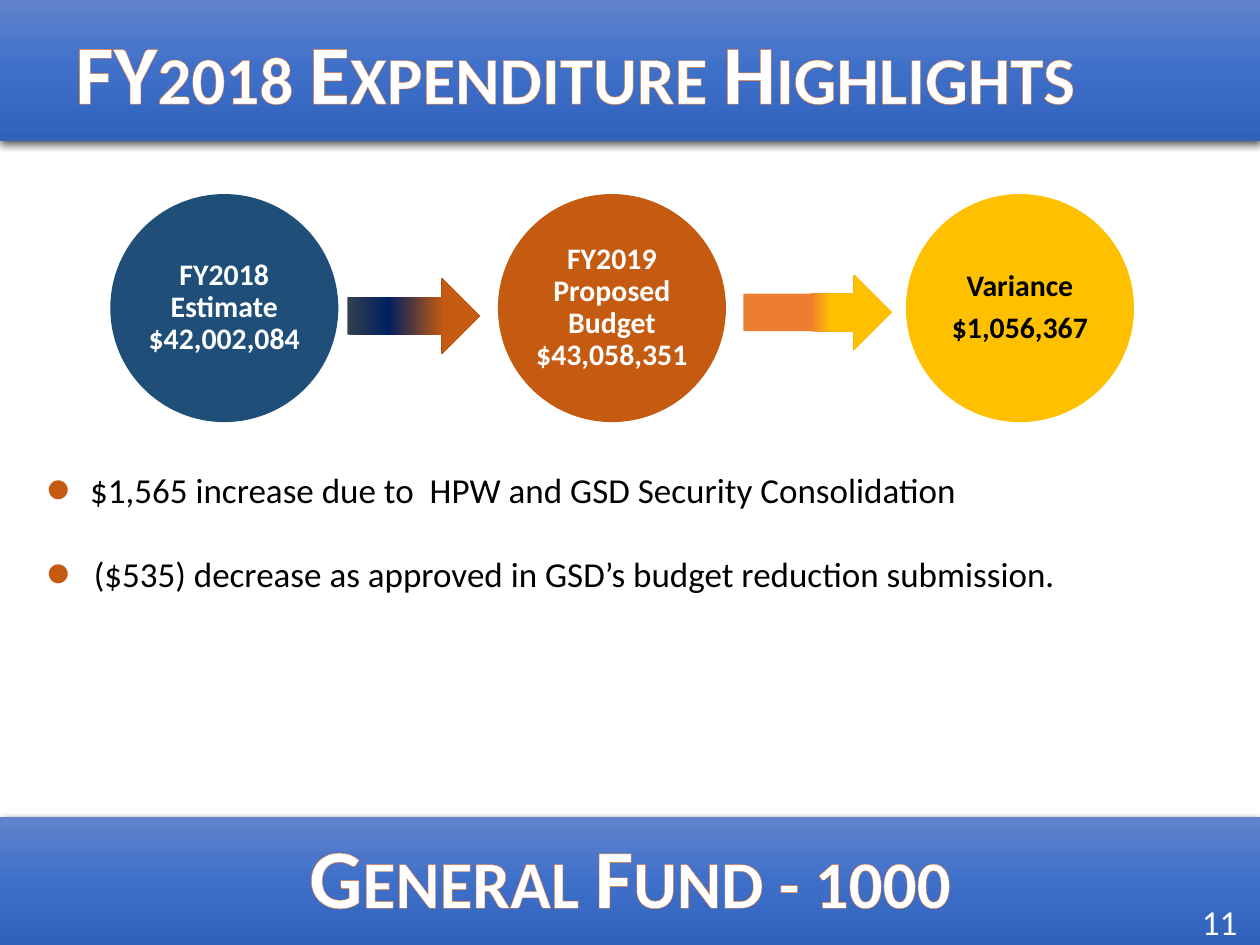
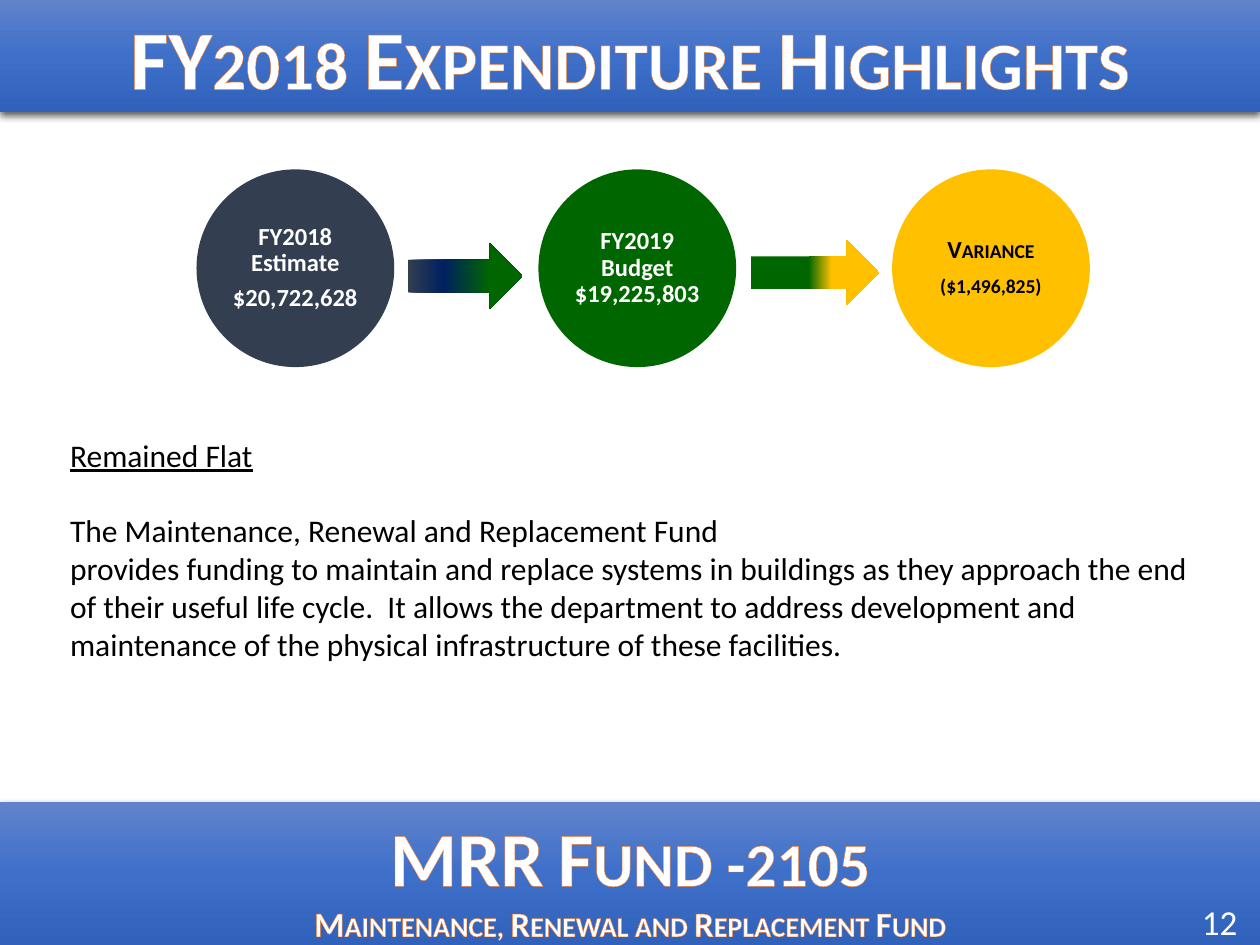
from lxml.etree import SubElement
from pptx import Presentation
from pptx.dml.color import RGBColor
from pptx.enum.shapes import MSO_SHAPE
from pptx.enum.text import MSO_ANCHOR, PP_ALIGN
from pptx.oxml.ns import qn
from pptx.util import Pt

WHITE = RGBColor(0xFF, 0xFF, 0xFF)
BLACK = RGBColor(0, 0, 0)
BAND_LIGHT = RGBColor(0x61, 0x83, 0xCB)
BAND_MID = RGBColor(0x3E, 0x70, 0xCA)
BAND_DARK = RGBColor(0x30, 0x62, 0xBB)
ORANGE = RGBColor(0xED, 0x7D, 0x31)
RUST = RGBColor(0xC5, 0x5A, 0x11)
GOLD = RGBColor(0xFF, 0xC0, 0x00)
BLUE = RGBColor(0x1F, 0x4E, 0x79)
SLATE = RGBColor(0x33, 0x3F, 0x50)
NAVY = RGBColor(0x00, 0x20, 0x60)
GREEN = RGBColor(0x00, 0x66, 0x00)

FONT = "Calibri"
SLIDE_W, SLIDE_H = 720, 540
BAND_STOPS = [(0, BAND_LIGHT), (50, BAND_MID), (100, BAND_DARK)]
HEADING = "FY2018 Expenditure Highlights"


def add_node(parent, tag, **attributes):
    return SubElement(parent, qn(tag), {k: str(v) for k, v in attributes.items()})


def add_plain_shape(slide, kind, left, top, width, height):
    shape = slide.shapes.add_shape(kind, Pt(left), Pt(top), Pt(width), Pt(height))
    shape.shadow.inherit = False
    shape.line.fill.background()
    return shape


def fill_gradient(shape, stops, angle=0):
    shape.fill.gradient()
    shape.fill.gradient_angle = angle
    stop_list = shape._element.spPr.find(".//" + qn("a:gsLst"))
    for stop in list(stop_list):
        stop_list.remove(stop)
    for percent, color in stops:
        stop = add_node(stop_list, "a:gs", pos=percent * 1000)
        add_node(stop, "a:srgbClr", val=color)


def drop_shadow(shape):
    effects = shape._element.spPr.find(qn("a:effectLst"))
    shadow = add_node(effects, "a:outerShdw", blurRad=Pt(4.5), dist=Pt(1.5),
                      dir=5400000, algn="ctr", rotWithShape=0)
    add_node(add_node(shadow, "a:srgbClr", val=BLACK), "a:alpha", val=63000)


def set_margins(frame, side, vertical):
    frame.margin_left = frame.margin_right = Pt(side)
    frame.margin_top = frame.margin_bottom = Pt(vertical)


def style_paragraph(paragraph, size, color, bold=False, small_caps=False):
    for run in paragraph.runs:
        run.font.name = FONT
        run.font.size = Pt(size)
        run.font.color.rgb = color
        run.font.bold = bold
        if small_caps:
            run._r.get_or_add_rPr().set("cap", "small")


def outline_text(paragraph):
    for run in paragraph.runs:
        properties = run._r.get_or_add_rPr()
        line = add_node(properties, "a:ln", w=Pt(0.52))
        add_node(add_node(line, "a:solidFill"), "a:srgbClr", val=ORANGE)
        properties.insert(0, line)


def add_band(slide, top, height, lines, anchor=MSO_ANCHOR.MIDDLE,
             align=PP_ALIGN.CENTER, indent=7.2):
    """Full-width gradient band; lines holds (text, size) pairs."""
    band = add_plain_shape(slide, MSO_SHAPE.RECTANGLE, 0, top, SLIDE_W, height)
    fill_gradient(band, BAND_STOPS, angle=270)
    drop_shadow(band)
    frame = band.text_frame
    frame.word_wrap = True
    frame.vertical_anchor = anchor
    set_margins(frame, 7.2, 4)
    frame.margin_left = Pt(indent)
    frame.text = "\n".join(text for text, _ in lines)
    for paragraph, (_, size) in zip(frame.paragraphs, lines):
        paragraph.alignment = align
        style_paragraph(paragraph, size, WHITE, bold=True, small_caps=True)
        outline_text(paragraph)


def add_footer(slide, top, lines, page):
    add_band(slide, top, SLIDE_H - top, lines, anchor=MSO_ANCHOR.TOP)
    frame = add_text_area(slide, 674, 513.4, 46, 26.6, str(page))
    frame.vertical_anchor = MSO_ANCHOR.MIDDLE
    frame.paragraphs[0].alignment = PP_ALIGN.CENTER
    style_paragraph(frame.paragraphs[0], 20, WHITE)


def add_text_area(slide, left, top, width, height, text):
    area = slide.shapes.add_textbox(Pt(left), Pt(top), Pt(width), Pt(height))
    frame = area.text_frame
    frame.word_wrap = True
    set_margins(frame, 7.2, 3.6)
    frame.text = text
    return frame


def add_budget_flow(slide, top, diameter, size, steps, arrows):
    """Circles (left, fill, text colour, small caps, text) joined by
    arrows (left, gradient stops)."""
    for left, color, text_color, small_caps, text in steps:
        circle = add_plain_shape(slide, MSO_SHAPE.OVAL, left, top, diameter, diameter)
        circle.fill.solid()
        circle.fill.fore_color.rgb = color
        frame = circle.text_frame
        frame.word_wrap = True
        frame.vertical_anchor = MSO_ANCHOR.MIDDLE
        set_margins(frame, 1.5, 1.5)
        frame.text = text
        for paragraph in frame.paragraphs:
            paragraph.alignment = PP_ALIGN.CENTER
            paragraph.line_spacing = 0.9
            paragraph.space_after = Pt(round(0.35 * size, 1))
            style_paragraph(paragraph, size, text_color, True, small_caps)

    height = 0.33 * diameter
    middle = top + diameter / 2
    proportions = [(0.58, 4.5), (0.65, 2.5)]
    for (left, stops), (width_ratio, drop) in zip(arrows, proportions):
        arrow = add_plain_shape(slide, MSO_SHAPE.RIGHT_ARROW, left,
                                middle + drop - height / 2,
                                width_ratio * diameter, height)
        fill_gradient(arrow, stops)


def add_bullets(slide, left, top, width, height, items):
    """Bulleted list; items holds (text, hanging indent) pairs."""
    frame = add_text_area(slide, left, top, width, height,
                          "\n".join(text for text, _ in items))
    for number, (paragraph, (_, indent)) in enumerate(zip(frame.paragraphs, items)):
        if number:
            paragraph.space_before = Pt(24)
        style_paragraph(paragraph, 20, BLACK)
        properties = paragraph._p.get_or_add_pPr()
        properties.set("marL", str(Pt(indent)))
        properties.set("indent", str(-Pt(indent)))
        add_node(add_node(properties, "a:buClr"), "a:srgbClr", val=RUST)
        add_node(properties, "a:buSzPct", val=200000)
        add_node(properties, "a:buFont", typeface="Arial")
        add_node(properties, "a:buChar", char="•")


def add_fund_description(slide, left, top, width, height, heading, lines):
    frame = add_text_area(slide, left, top, width, height,
                          "\n".join([heading, *lines]))
    for paragraph in frame.paragraphs:
        style_paragraph(paragraph, 18, BLACK)
    frame.paragraphs[0].runs[0].font.underline = True
    frame.paragraphs[1].space_before = Pt(21.5)


def build_general_fund(slide):
    add_band(slide, 0, 80.6, [(HEADING, 48)], align=PP_ALIGN.LEFT, indent=43)
    add_footer(slide, 467, [("General Fund - 1000", 48)], 11)
    add_budget_flow(
        slide, 110.9, 130.3, 17,
        [(63, BLUE, WHITE, False, "FY2018 Estimate $42,002,084"),
         (284.5, RUST, WHITE, False, "FY2019 Proposed Budget $43,058,351"),
         (517.7, GOLD, BLACK, False, "Variance\n$1,056,367")],
        [(198.5, [(0, SLATE), (31, NAVY), (73, RUST)]),
         (424.8, [(0, ORANGE), (45, ORANGE), (59, GOLD), (63, GOLD)])])
    add_bullets(
        slide, 19.5, 264.2, 700, 128,
        [("$1,565 increase due to  HPW and GSD Security Consolidation", 25),
         ("($535) decrease as approved in GSD’s budget reduction submission.", 27)])


def build_replacement_fund(slide):
    add_band(slide, 0, 64, [(HEADING, 48)])
    add_footer(slide, 458.5, [("MRR Fund -2105", 44),
                              ("Maintenance, Renewal and Replacement Fund", 20)], 12)
    add_budget_flow(
        slide, 96.8, 113, 14,
        [(112.3, SLATE, WHITE, False, "FY2018 Estimate\n$20,722,628"),
         (307.7, GREEN, WHITE, False, "FY2019 Budget $19,225,803"),
         (509.8, GOLD, BLACK, True, "Variance\n($1,496,825)")],
        [(233, [(0, SLATE), (31, NAVY), (73, GREEN)]),
         (429, [(0, GREEN), (45, GREEN), (63, GOLD)])])
    add_fund_description(
        slide, 33, 245.5, 662, 206, "Remained Flat",
        ["The Maintenance, Renewal and Replacement Fund",
         "provides funding to maintain and replace systems in buildings as they "
         "approach the end of their useful life cycle.  It allows the department "
         "to address development and maintenance of the physical infrastructure "
         "of these facilities."])


def main():
    deck = Presentation()
    deck.slide_width, deck.slide_height = Pt(SLIDE_W), Pt(SLIDE_H)
    blank = deck.slide_layouts[6]
    for build in (build_general_fund, build_replacement_fund):
        build(deck.slides.add_slide(blank))
    deck.save("out.pptx")


if __name__ == "__main__":
    main()
